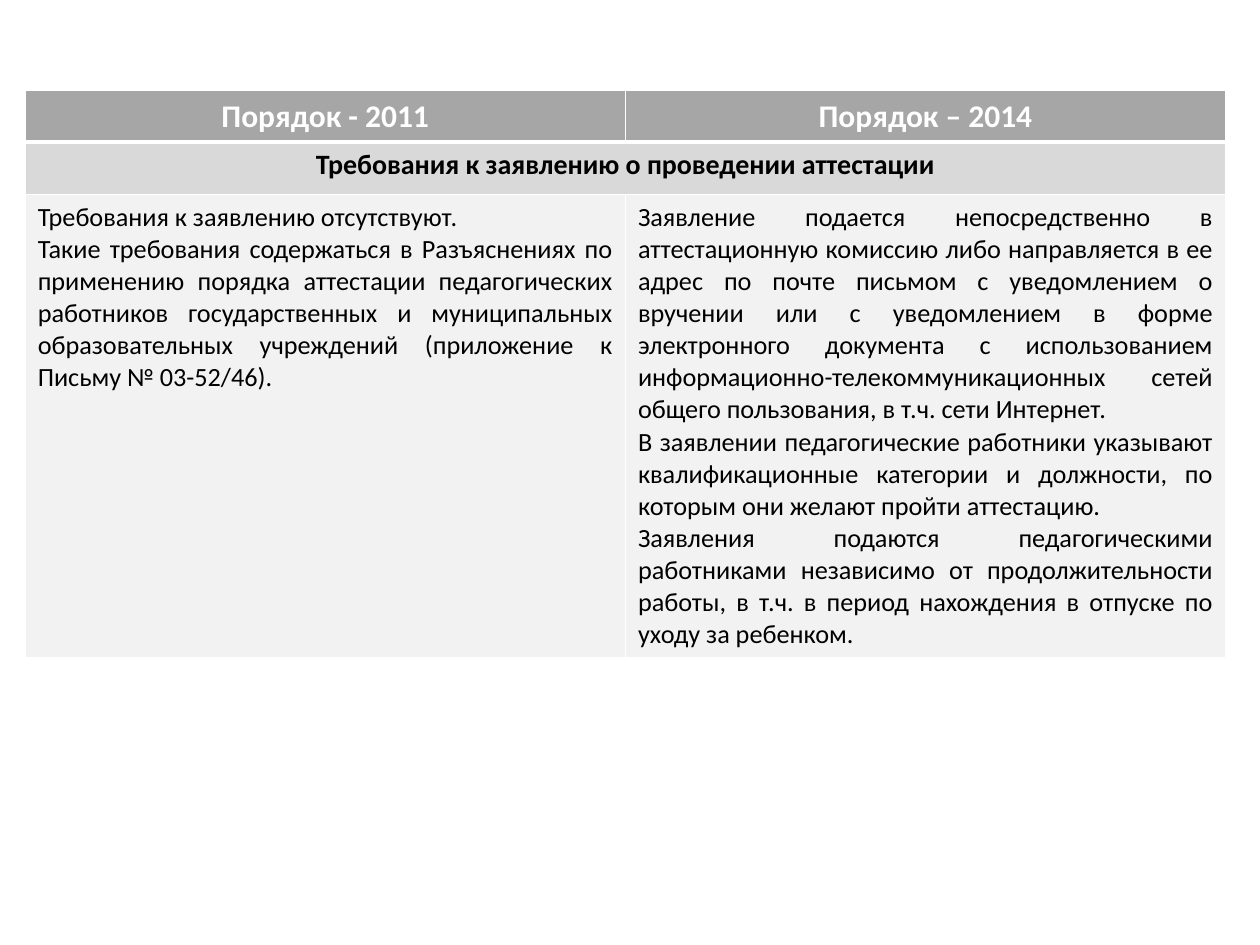
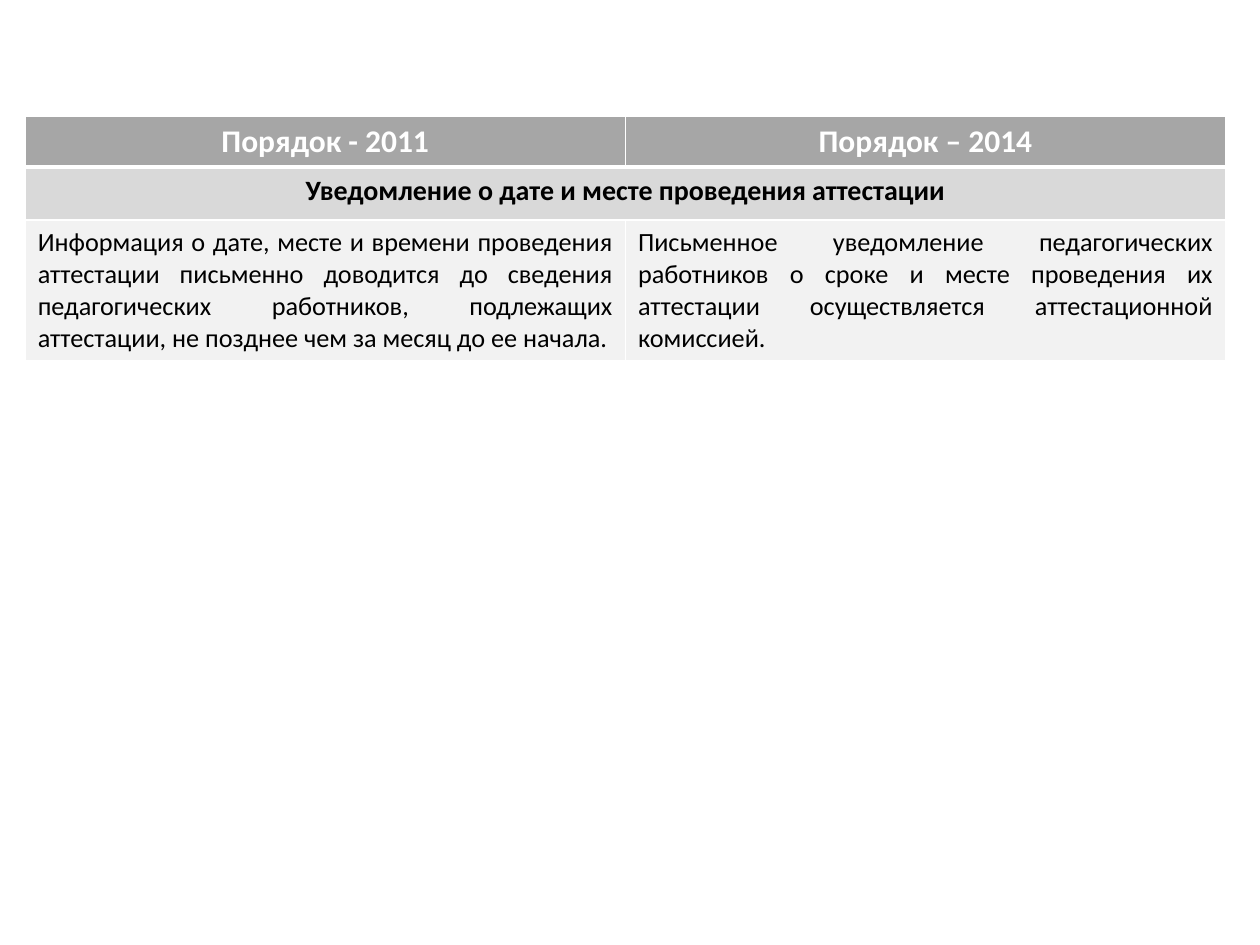
from lxml import etree
from pptx import Presentation
from pptx.dml.color import RGBColor
from pptx.enum import text
from pptx.oxml import ns
from pptx.util import Pt

HUES = {"head": "A6A6A6", "band": "D9D9D9", "body": "F2F2F2",
        "line": "FFFFFF", "light": "FFFFFF", "dark": "000000"}
ALIGN = text.PP_ALIGN
LOOKS = {
    "head": {"hue": "light", "align": ALIGN.CENTER,
             "font": {"name": "Calibri", "size": Pt(18), "bold": True}},
    "band": {"hue": "dark", "align": ALIGN.CENTER,
             "font": {"name": "Calibri", "size": Pt(16), "bold": True}},
    "body": {"hue": "dark", "align": ALIGN.JUSTIFY,
             "font": {"name": "Calibri", "size": Pt(15), "bold": False}},
}
ROWS = {"head": 19.44, "band": 30.24, "body": 51.84}
LEFT, COL = 14.4, 343
HEADS = ["Порядок - 2011", "Порядок – 2014"]

PAGES = [
    (51.84, "Требования к заявлению о проведении аттестации", [
        ["Требования к заявлению отсутствуют.",
         "Такие требования содержаться в Разъяснениях по применению порядка "
         "аттестации педагогических работников государственных и муниципальных "
         "образовательных учреждений (приложение к Письму № 03-52/46)."],
        ["Заявление подается непосредственно в аттестационную комиссию либо "
         "направляется в ее адрес по почте письмом с уведомлением о вручении или "
         "с уведомлением в форме электронного документа с использованием "
         "информационно-телекоммуникационных сетей общего пользования, "
         "в т.ч. сети Интернет.",
         "В заявлении педагогические работники указывают квалификационные "
         "категории и должности, по которым они желают пройти аттестацию.",
         "Заявления подаются педагогическими работниками независимо от "
         "продолжительности работы, в т.ч. в период нахождения в отпуске по "
         "уходу за ребенком."],
    ]),
    (66.24, "Уведомление о дате и месте проведения аттестации", [
        ["Информация о дате, месте и времени проведения аттестации письменно "
         "доводится до сведения педагогических работников, подлежащих "
         "аттестации, не позднее чем за месяц до ее начала."],
        ["Письменное уведомление педагогических работников о сроке и месте "
         "проведения их аттестации осуществляется аттестационной комиссией."],
    ]),
]


class Deck:
    def __init__(self):
        self.file = Presentation()
        self.file.slide_width, self.file.slide_height = Pt(720), Pt(540)

    def page(self):
        self.slide = self.file.slides.add_slide(self.file.slide_layouts[6])

    def edges(self, cell, kind):
        wide = {"head": "B", "band": "T"}.get(kind)
        props = cell._tc.get_or_add_tcPr()
        for side in "LRTB":
            width = Pt(3 if side == wide else 1)
            line = etree.SubElement(props, ns.qn(f"a:ln{side}"), w=str(width))
            fill = etree.SubElement(line, ns.qn("a:solidFill"))
            etree.SubElement(fill, ns.qn("a:srgbClr"), val=HUES["line"])

    def cell(self, cell, kind, lines):
        look = LOOKS[kind]
        self.edges(cell, kind)
        cell.fill.solid()
        cell.fill.fore_color.rgb = RGBColor.from_string(HUES[kind])
        cell.text = "\n".join(lines)
        for para in cell.text_frame.paragraphs:
            para.alignment = look["align"]
            for font in [para.font] + [run.font for run in para.runs]:
                for key, value in look["font"].items():
                    setattr(font, key, value)
                font.color.rgb = RGBColor.from_string(HUES[look["hue"]])

    def table(self, top, title, sides):
        frame = self.slide.shapes.add_table(
            len(ROWS), 2, Pt(LEFT), Pt(top), Pt(2 * COL), Pt(sum(ROWS.values())))
        grid = frame.table
        grid.horz_banding = False
        texts = [[[head] for head in HEADS], [[title], []], sides]
        for row, ((kind, high), cells) in enumerate(zip(ROWS.items(), texts)):
            grid.rows[row].height = Pt(high)
            for col, lines in enumerate(cells):
                self.cell(grid.cell(row, col), kind, lines)
        grid.cell(1, 0).merge(grid.cell(1, 1))


def main():
    deck = Deck()
    for top, title, sides in PAGES:
        deck.page()
        deck.table(top, title, sides)
    deck.file.save("out.pptx")


if __name__ == "__main__":
    main()
